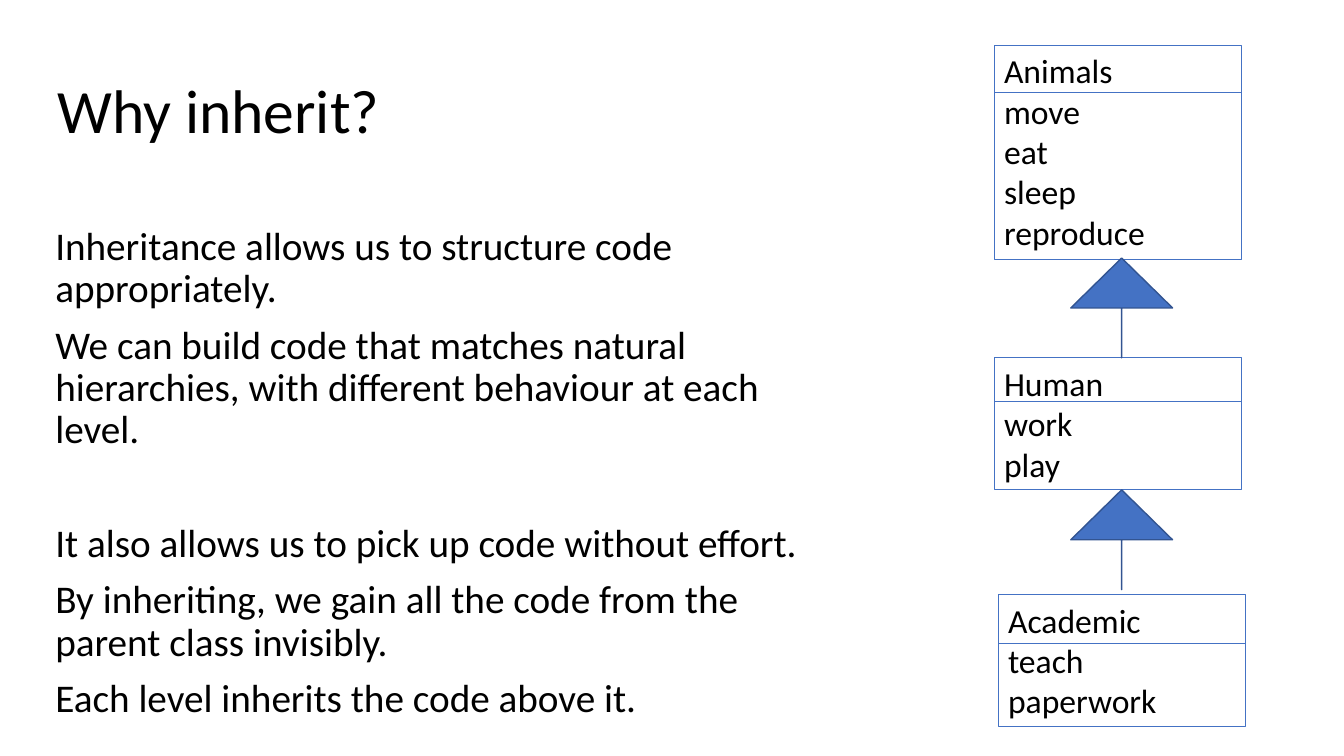
import pptx
import pptx.util
import pptx.dml.color
import pptx.enum.shapes
import pptx.enum.text
import pptx.oxml.ns
import lxml.etree

Inches, Pt = pptx.util.Inches, pptx.util.Pt
SHAPE = pptx.enum.shapes.MSO_SHAPE
ANCHOR = pptx.enum.text.MSO_ANCHOR
COLORS = {"text": "000000", "blue": "4472C4", "edge": "325491", "white": "FFFFFF"}


def rgb(name):
    return pptx.dml.color.RGBColor.from_string(COLORS[name])


def write(tf, text, size=24, spacing=None, before=0, first=False):
    p = tf.paragraphs[0] if first else tf.add_paragraph()
    p.alignment = pptx.enum.text.PP_ALIGN.LEFT
    p.line_spacing = spacing
    p.space_before = Pt(before)
    r = p.add_run()
    r.text = text
    r.font.size = Pt(size)
    r.font.name = "Calibri"
    r.font.color.rgb = rgb("text")


prs = pptx.Presentation()
prs.slide_width, prs.slide_height = Inches(13.33), Inches(7.5)
s = prs.slides.add_slide(prs.slide_layouts[6])

# Title
tf = s.shapes.add_textbox(Inches(0.47), Inches(0.4), Inches(6.54), Inches(1.45)).text_frame
tf.word_wrap = True
tf.vertical_anchor = ANCHOR.MIDDLE
write(tf, "Why inherit?", size=44, spacing=0.9, first=True)

# Body, with a wider gap before the second argument
body = [
    ("Inheritance allows us to structure code appropriately.", 10),
    ("We can build code that matches natural hierarchies, "
     "with different behaviour at each level.", 10),
    ("It also allows us to pick up code without effort.", 50.7),
    ("By inheriting, we gain all the code from the parent class invisibly.", 10),
    ("Each level inherits the code above it.", 10),
]
tf = s.shapes.add_textbox(Inches(0.45), Inches(2.2), Inches(7.98), Inches(5.01)).text_frame
tf.word_wrap = True
for i, (text, before) in enumerate(body):
    write(tf, text, size=28, spacing=0.9, before=before, first=i == 0)

# Class boxes: left, top, height, divider y, fill, lines
classes = [
    (9.86, 0.45, 2.12, 0.92, None, ["Animals", "move", "eat", "sleep", "reproduce"]),
    (9.9, 5.9, 1.31, 6.38, "white", ["Academic", "teach", "paperwork"]),
    (9.86, 3.55, 1.31, 3.98, "white", ["Human", "work", "play"]),
]
box_w = 2.45
for left, top, height, divider_y, fill, lines in classes:
    group = s.shapes.add_group_shape()
    sp = group.shapes.add_shape(SHAPE.RECTANGLE, Inches(left), Inches(top),
                                Inches(box_w), Inches(height))
    sp.shadow.inherit = False
    if fill:
        sp.fill.solid()
        sp.fill.fore_color.rgb = rgb(fill)
    else:
        sp.fill.background()
    sp.line.color.rgb = rgb("blue")
    sp.line.width = Pt(0.75)
    tf = sp.text_frame
    tf.word_wrap = True
    tf.vertical_anchor = ANCHOR.TOP
    tf.auto_size = pptx.enum.text.MSO_AUTO_SIZE.SHAPE_TO_FIT_TEXT
    for i, text in enumerate(lines):
        write(tf, text, first=i == 0)

    divider = group.shapes.add_connector(
        pptx.enum.shapes.MSO_CONNECTOR.STRAIGHT, Inches(left), Inches(divider_y),
        Inches(left + box_w), Inches(divider_y))
    divider.line.color.rgb = rgb("blue")
    divider.line.width = Pt(0.5)
    lxml.etree.SubElement(divider._element.spPr, pptx.oxml.ns.qn("a:effectLst"))

# Inheritance arrows, pointing up with a thin shaft
for top in (2.55, 4.85):
    arrow = s.shapes.add_shape(SHAPE.RIGHT_ARROW, Inches(10.63), Inches(top),
                               Inches(0.99), Inches(1.01))
    arrow.rotation = 270
    arrow.adjustments[0] = 0
    arrow.adjustments[1] = 0.5
    arrow.shadow.inherit = False
    arrow.fill.solid()
    arrow.fill.fore_color.rgb = rgb("blue")
    arrow.line.color.rgb = rgb("edge")
    arrow.line.width = Pt(1)

prs.save("out.pptx")
